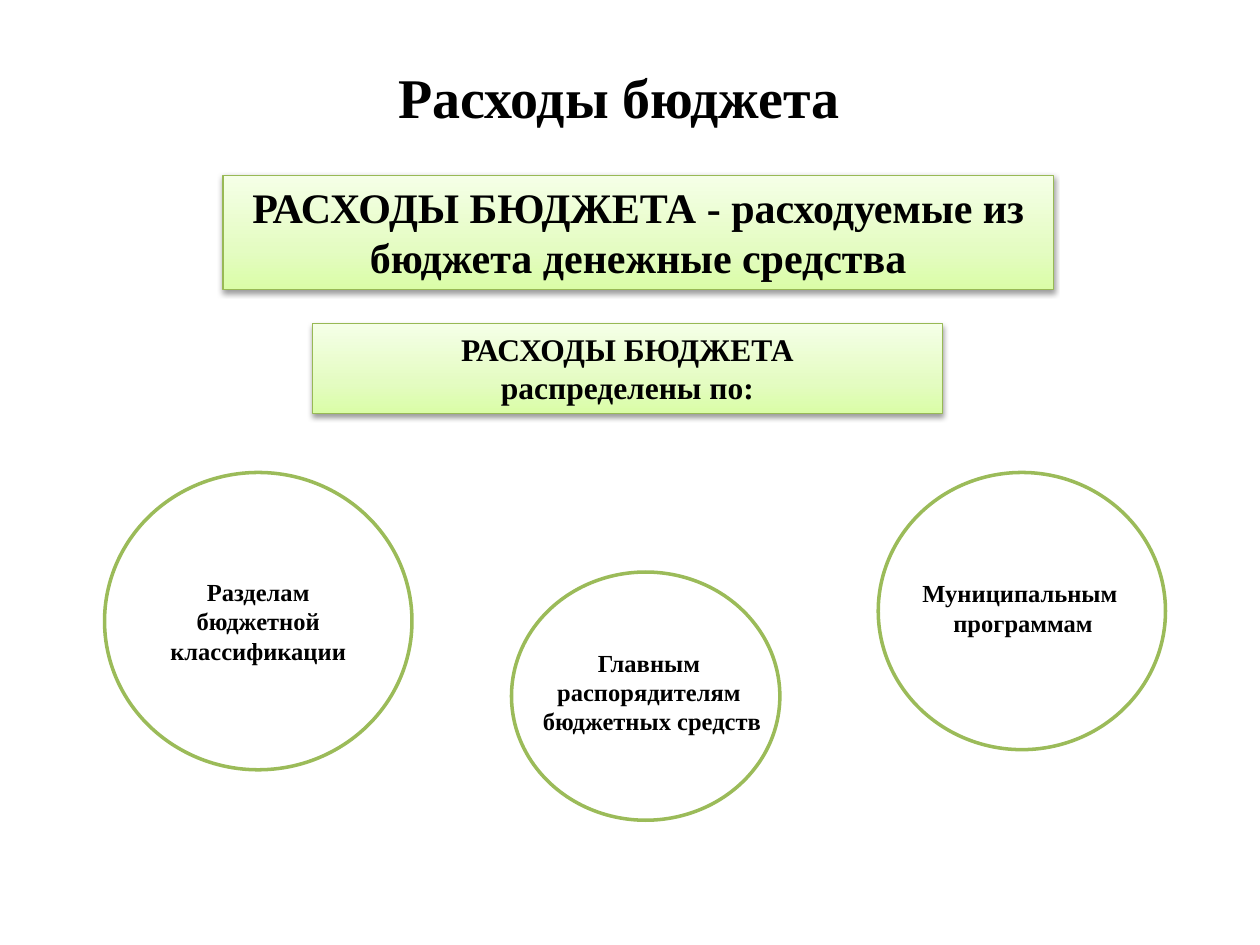
from dataclasses import dataclass

from pptx import Presentation
from pptx.dml.color import RGBColor
from pptx.enum.shapes import MSO_SHAPE as Shape
from pptx.enum.text import MSO_ANCHOR as Anchor, MSO_AUTO_SIZE as AutoSize, PP_ALIGN as Align
from pptx.oxml import parse_xml
from pptx.oxml.ns import nsdecls, qn
from pptx.util import Inches, Pt


@dataclass(frozen=True)
class Theme:
    """Colours, font and type sizes of the slide."""
    font: str = "Times New Roman"
    text: str = "000000"
    paper: str = "FFFFFF"
    banner_line: str = "98B955"
    circle_line: str = "9BBB59"
    gradient: tuple = ((0, "DAFDA7"), (35, "E4FCC2"), (100, "F5FFE7"))
    title: int = 32
    definition: int = 24
    heading: int = 18
    label: int = 14


THEME = Theme()


def color(value):
    """Turn a hex string into an RGB colour."""
    return RGBColor.from_string(value)


def write_text(shape, lines, size, anchor=Anchor.MIDDLE, wrap=True, auto_size=AutoSize.NONE):
    """Write centred bold lines, one paragraph each."""
    frame = shape.text_frame
    settings = {"word_wrap": wrap, "auto_size": auto_size, "vertical_anchor": anchor}
    for name, value in settings.items():
        setattr(frame, name, value)
    frame.text = "\n".join(lines)
    for paragraph in frame.paragraphs:
        paragraph.alignment = Align.CENTER
        font = paragraph.runs[0].font
        for name, value in {"name": THEME.font, "size": Pt(size), "bold": True}.items():
            setattr(font, name, value)
        font.color.rgb = color(THEME.text)


def add_text(slide, box, lines, size, **settings):
    """Place a text box."""
    shape = slide.shapes.add_textbox(*map(Inches, box))
    write_text(shape, lines, size, **settings)


def add_outlined(slide, kind, box, line, width):
    """Place a preset shape with a coloured outline and no shadow."""
    shape = slide.shapes.add_shape(kind, *map(Inches, box))
    shape.shadow.inherit = False
    shape.line.color.rgb = color(line)
    shape.line.width = Pt(width)
    return shape


def add_banner(slide, box, lines, size):
    """Place a green gradient banner with a soft shadow."""
    shape = add_outlined(slide, Shape.RECTANGLE, box, THEME.banner_line, 0.75)
    shape.fill.gradient()
    shape.fill.gradient_angle = 90
    stops = "".join(
        f'<a:gs pos="{position * 1000}"><a:srgbClr val="{value}"/></a:gs>'
        for position, value in THEME.gradient
    )
    properties = shape._element.spPr
    old_stops = properties.find(qn("a:gradFill")).find(qn("a:gsLst"))
    old_stops.getparent().replace(
        old_stops, parse_xml(f'<a:gsLst {nsdecls("a")}>{stops}</a:gsLst>')
    )
    properties.find(qn("a:effectLst")).append(parse_xml(
        f'<a:outerShdw {nsdecls("a")} blurRad="{Pt(3.1)}" dist="{Pt(1.6)}" dir="5400000" '
        f'rotWithShape="0"><a:srgbClr val="{THEME.text}"><a:alpha val="38000"/></a:srgbClr>'
        '</a:outerShdw>'
    ))
    write_text(shape, lines, size, anchor=Anchor.TOP, auto_size=AutoSize.SHAPE_TO_FIT_TEXT)


def add_circle(slide, box, lines=(), label_box=None):
    """Place a white circle with its label inside or in a box of its own."""
    shape = add_outlined(slide, Shape.OVAL, box, THEME.circle_line, 2)
    shape.fill.solid()
    shape.fill.fore_color.rgb = color(THEME.paper)
    if label_box:
        add_text(slide, label_box, lines, THEME.label, anchor=Anchor.TOP, wrap=False,
                 auto_size=AutoSize.SHAPE_TO_FIT_TEXT)
    else:
        write_text(shape, lines, THEME.label)


def build_slide(slide):
    """Place the title, the two banners and the three circles."""
    add_text(slide, (0.28, 0.13, 9.27, 1.27), ["Расходы бюджета"], THEME.title)
    add_banner(slide, (1.77, 1.39, 6.59, 0.91),
               ["РАСХОДЫ БЮДЖЕТА - расходуемые из бюджета денежные средства"],
               THEME.definition)
    add_banner(slide, (2.48, 2.57, 5, 0.71),
               ["РАСХОДЫ БЮДЖЕТА", "распределены по:"], THEME.heading)
    add_circle(slide, (0.83, 3.75, 2.44, 2.36), ["Разделам бюджетной классификации"])
    add_circle(slide, (4.06, 4.54, 2.13, 1.97),
               ["Главным ", "распорядителям ", "бюджетных средств"],
               (4.2, 5.09, 1.95, 0.81))
    add_circle(slide, (6.97, 3.75, 2.28, 2.2),
               ["Муниципальным ", "программам"], (7.21, 4.54, 1.82, 0.57))


def main():
    """Build and save the presentation."""
    presentation = Presentation()
    presentation.slide_width = Inches(10)
    presentation.slide_height = Inches(7.5)
    build_slide(presentation.slides.add_slide(presentation.slide_layouts[6]))
    presentation.save("out.pptx")


if __name__ == "__main__":
    main()
